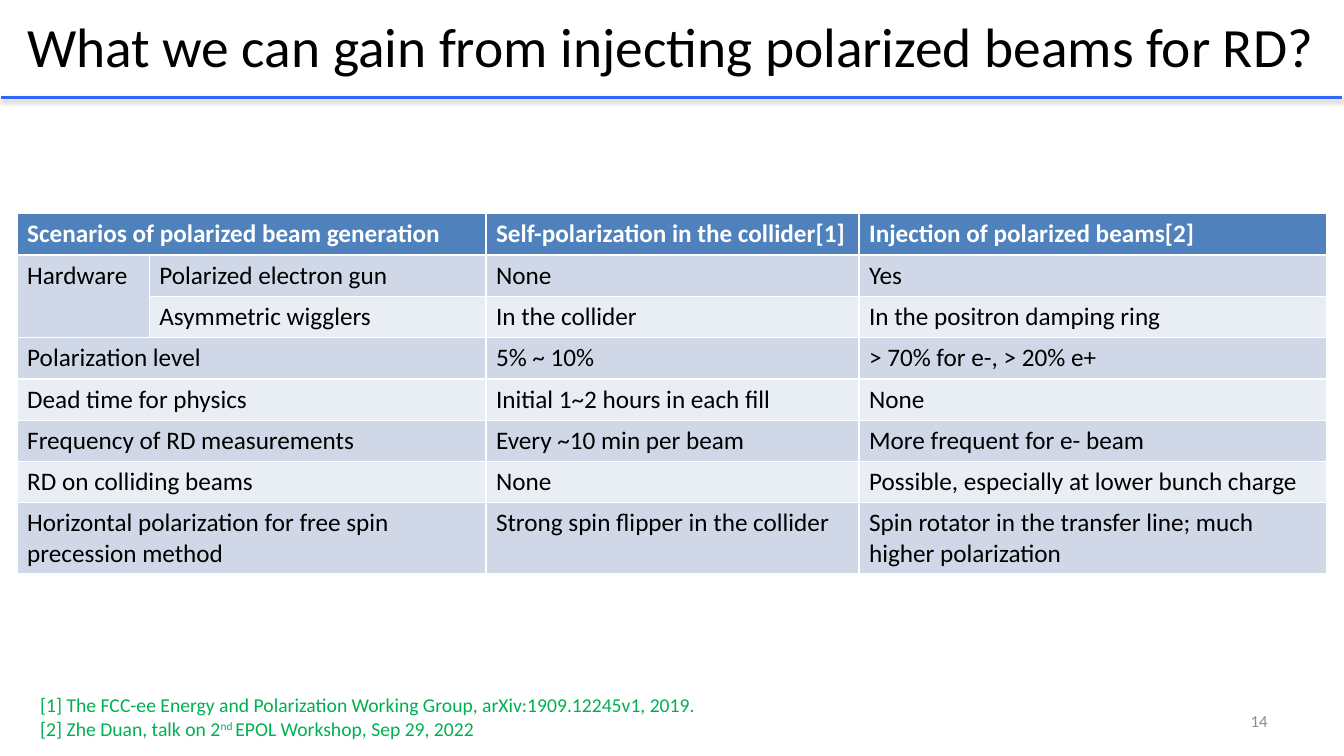
from dataclasses import dataclass

from lxml.etree import SubElement
from pptx import Presentation
from pptx.dml.color import RGBColor as RGB
from pptx.enum.text import MSO_ANCHOR as Anchor, MSO_AUTO_SIZE as Fit, PP_ALIGN as Align
from pptx.oxml.ns import qn
from pptx.util import Inches, Pt

TITLE = "What we can gain from injecting polarized beams for RD?"
PAGE = "14"
HEAD = ("Scenarios of polarized beam generation", None,
        "Self-polarization in the collider[1]", "Injection of polarized beams[2]")
# None marks a cell covered by the one to its left, or above it in the first column
ROWS = [
    ("Hardware", "Polarized electron gun", "None", "Yes"),
    (None, "Asymmetric wigglers", "In the collider", "In the positron damping ring"),
    ("Polarization level", None, "5% ~ 10%", "> 70% for e-, > 20% e+"),
    ("Dead time for physics", None, "Initial 1~2 hours in each fill", "None"),
    ("Frequency of RD measurements", None, "Every ~10 min per beam",
     "More frequent for e- beam"),
    ("RD on colliding beams", None, "None", "Possible, especially at lower bunch charge"),
    ("Horizontal polarization for free spin precession method", None,
     "Strong spin flipper in the collider",
     "Spin rotator in the transfer line; much higher polarization"),
]
WIDTHS = (1.31, 3.34, 3.7, 4.64)
ROW_H = 0.41
# Each reference is a list of (text, raised) runs
REFS = [
    [("[1] The FCC-ee Energy and Polarization Working Group, arXiv:1909.12245v1, 2019.", False)],
    [("[2] Zhe Duan, talk on 2", False), ("nd ", True),
     ("EPOL Workshop, Sep 29, 2022", False)],
]


@dataclass(frozen=True)
class Theme:
    face: str = "Calibri"
    ink: str = "000000"
    white: str = "FFFFFF"
    rule: str = "3366FF"
    head: str = "4F81BD"
    bands: tuple = ("D0D8E8", "E9EDF4")
    ref: str = "00B050"
    page: str = "8C8C8C"
    title_pt: float = 39.6
    cell_pt: int = 18
    ref_pt: int = 14
    page_pt: int = 12


LOOK = Theme()


def style(para, size, color, bold=False, align=None):
    font = para.font
    font.name, font.size, font.bold = LOOK.face, Pt(size), bold
    font.color.rgb = RGB.from_string(color)
    if align is not None:
        para.alignment = align


def add_title(slide):
    title = slide.shapes.title
    title.left, title.top = Inches(0.01), Inches(0.06)
    title.width, title.height = Inches(13.28), Inches(0.78)
    frame = title.text_frame
    frame.text = TITLE
    frame.auto_size = Fit.NONE
    frame.vertical_anchor = Anchor.MIDDLE
    style(frame.paragraphs[0], LOOK.title_pt, LOOK.ink, align=Align.CENTER)


def add_rule(slide):
    """Draw the line under the title, with its soft shadow."""
    y = Inches(0.97)
    rule = slide.shapes.add_connector(1, Inches(0.01), y, Inches(13.31), y)
    rule.line.color.rgb = RGB.from_string(LOOK.rule)
    rule.line.width = Pt(2)
    effects = SubElement(rule._element.spPr, qn("a:effectLst"))
    shadow = SubElement(effects, qn("a:outerShdw"), blurRad="40000", dist="20000",
                        dir="5400000", rotWithShape="0")
    tint = SubElement(shadow, qn("a:srgbClr"), val=LOOK.ink)
    SubElement(tint, qn("a:alpha"), val="38000")


def add_grid(slide):
    data = [HEAD, *ROWS]
    grid = slide.shapes.add_table(
        len(data), len(WIDTHS), Inches(0.17), Inches(2.12),
        Inches(sum(WIDTHS)), Inches(ROW_H * len(data))).table
    for col, width in zip(grid.columns, WIDTHS):
        col.width = Inches(width)
    for r, row in enumerate(data):
        grid.rows[r].height = Inches(ROW_H)
        top = r == 0
        fill = LOOK.head if top else LOOK.bands[(r - 1) % 2]
        for c, text in enumerate(row):
            cell = grid.cell(r, c)
            cell.fill.solid()
            cell.fill.fore_color.rgb = RGB.from_string(fill)
            if text is not None:
                cell.text = text
                style(cell.text_frame.paragraphs[0], LOOK.cell_pt,
                      LOOK.white if top else LOOK.ink, bold=top)
            elif c == 0:
                grid.cell(r - 1, c).merge(cell)
            else:
                grid.cell(r, c - 1).merge(cell)


def add_box(slide, *place):
    frame = slide.shapes.add_textbox(*map(Inches, place)).text_frame
    frame.word_wrap = True
    return frame


def add_refs(slide):
    frame = add_box(slide, 0.3, 6.83, 9.98, 0.57)
    for i, runs in enumerate(REFS):
        para = frame.add_paragraph() if i else frame.paragraphs[0]
        style(para, LOOK.ref_pt, LOOK.ref)
        for text, raised in runs:
            run = para.add_run()
            run.text = text
            if raised:
                run._r.get_or_add_rPr().set("baseline", "30000")


def add_page(slide):
    frame = add_box(slide, 9.56, 6.95, 3.11, 0.4)
    frame.vertical_anchor = Anchor.MIDDLE
    frame.text = PAGE
    style(frame.paragraphs[0], LOOK.page_pt, LOOK.page, align=Align.RIGHT)


def main():
    deck = Presentation()
    deck.slide_width, deck.slide_height = Inches(13.33), Inches(7.5)
    slide = deck.slides.add_slide(deck.slide_layouts[5])
    for add in (add_rule, add_title, add_page, add_grid, add_refs):
        add(slide)
    deck.save("out.pptx")


if __name__ == "__main__":
    main()
